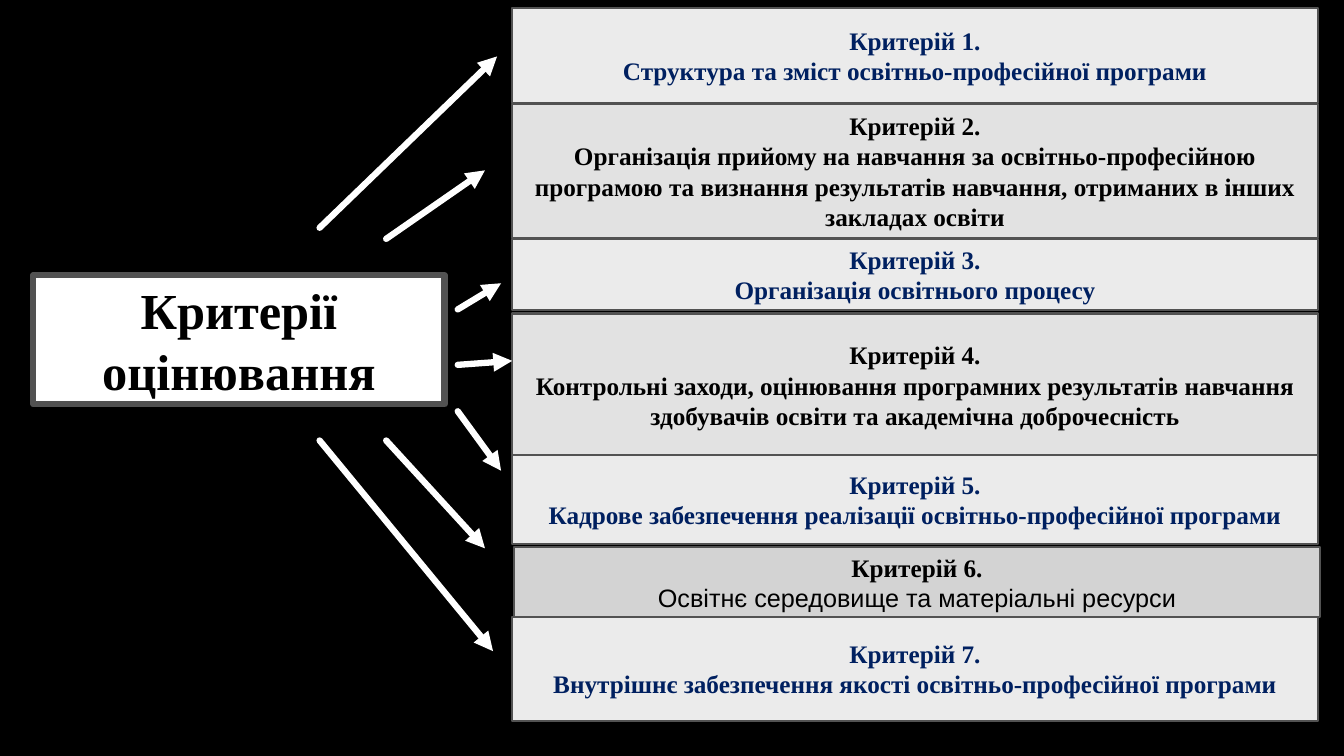
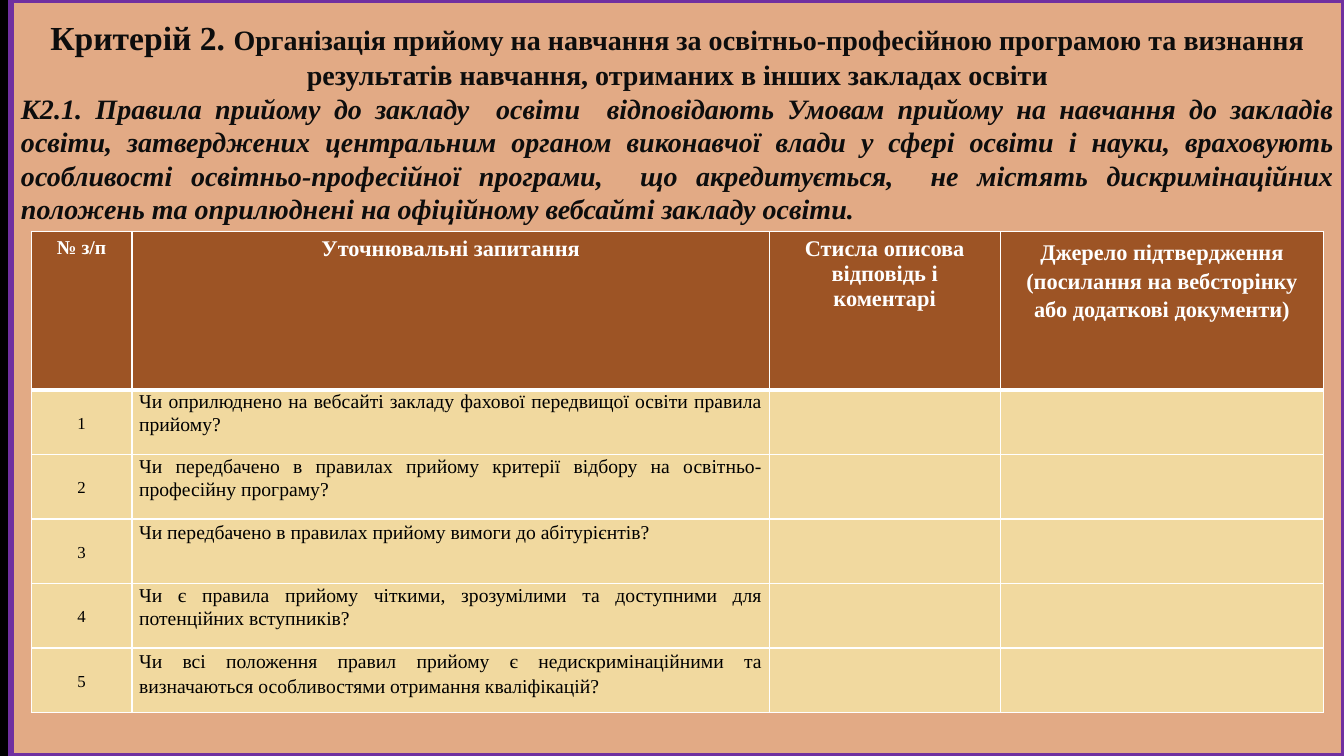
from dataclasses import dataclass

from lxml.etree import SubElement
from pptx import Presentation
from pptx.dml.color import RGBColor
from pptx.enum.shapes import MSO_CONNECTOR, MSO_SHAPE
from pptx.enum.text import MSO_ANCHOR as Anchor, PP_ALIGN as Align
from pptx.oxml import parse_xml
from pptx.oxml.ns import nsdecls, qn
from pptx.util import Inches, Pt

COLORS = {
    "black": "000000", "white": "FFFFFF", "frame": "525252", "navy": "002060",
    "light": "EBEBEB", "medium": "E2E2E2", "dark": "D3D3D3",
    "peach": "E2AA85", "purple": "7030A0", "ink": "0D0D0D",
    "brown": "9D5425", "sand": "F1D99F",
}
SERIF = "Times New Roman"


@dataclass(frozen=True)
class Run:
    text: str
    size: float
    color: str = "black"
    bold: bool = True
    italic: bool = False
    font: str = SERIF


@dataclass(frozen=True)
class Para:
    runs: tuple[Run, ...]
    align: Align = Align.CENTER
    spacing: float | None = None


@dataclass(frozen=True)
class Box:
    left: float
    top: float
    width: float
    height: float
    fill: str
    line: str
    weight: float


@dataclass(frozen=True)
class Criterion:
    text: str
    top: float
    height: float
    fill: str = "light"
    color: str = "navy"
    left: float = 5.08
    plain: bool = False


@dataclass(frozen=True)
class Arrow:
    x1: float
    y1: float
    x2: float
    y2: float


@dataclass(frozen=True)
class Question:
    text: str
    spacing: float = 1.06


CRITERIA = (
    Criterion("Структура та зміст освітньо-професійної програми", 0.08, 0.94),
    Criterion("Організація прийому на навчання за освітньо-професійною програмою "
              "та визнання результатів навчання, отриманих в інших закладах освіти",
              1.03, 1.33, "medium", "black"),
    Criterion("Організація освітнього процесу", 2.37, 0.71),
    Criterion("Контрольні заходи, оцінювання програмних результатів навчання "
              "здобувачів освіти та академічна доброчесність",
              3.11, 1.42, "medium", "black"),
    Criterion("Кадрове забезпечення реалізації освітньо-професійної програми", 4.51, 0.89),
    Criterion("Освітнє середовище та матеріальні ресурси",
              5.43, 0.69, "dark", "black", 5.1, True),
    Criterion("Внутрішнє забезпечення якості освітньо-професійної програми", 6.12, 1.03),
)
ARROWS = (
    Arrow(3.17, 2.26, 4.93, 0.56),
    Arrow(3.83, 2.37, 4.81, 1.69),
    Arrow(4.54, 3.07, 4.97, 2.81),
    Arrow(4.54, 3.62, 5.08, 3.58),
    Arrow(4.54, 4.08, 4.97, 4.67),
    Arrow(3.83, 4.37, 4.81, 5.44),
    Arrow(3.17, 4.37, 4.89, 6.46),
)
RULE = ("К2.1. Правила прийому до закладу  освіти  відповідають Умовам прийому на "
        "навчання до закладів освіти, затверджених центральним органом виконавчої "
        "влади у сфері освіти і науки, враховують особливості освітньо-професійної "
        "програми,  що акредитується,  не містять дискримінаційних положень та "
        "оприлюднені на офіційному вебсайті закладу освіти.")
HEADINGS = (
    (("№ з/п",), 14, None),
    (("Уточнювальні запитання",), 16, None),
    (("Стисла описова відповідь і коментарі",), 16, None),
    (("Джерело підтвердження",
      "(посилання на вебсторінку або додаткові документи)"), 16, 1.15),
)
QUESTIONS = (
    Question("Чи оприлюднено на вебсайті закладу фахової передвищої освіти правила прийому?"),
    Question("Чи передбачено в правилах прийому критерії відбору на "
             "освітньо-професійну програму?"),
    Question("Чи передбачено в правилах прийому вимоги до абітурієнтів?", 1.15),
    Question("Чи є правила прийому чіткими, зрозумілими та доступними для "
             "потенційних вступників?"),
    Question("Чи всі положення правил прийому є недискримінаційними та визначаються "
             "особливостями отримання кваліфікацій?", 1.15),
)
COLUMN_WIDTHS = (1, 6.32, 2.29, 3.21)
HEADER_HEIGHT, ROW_HEIGHT = 1.57, 0.64


def rgb(name: str) -> RGBColor:
    return RGBColor.from_string(COLORS[name])


def apply_format(target, values: dict) -> None:
    for attribute, value in values.items():
        setattr(target, attribute, value)


def paint(fill, color: str) -> None:
    fill.solid()
    fill.fore_color.rgb = rgb(color)


def write(frame, paras: tuple[Para, ...]) -> None:
    for index, para in enumerate(paras):
        paragraph = frame.add_paragraph() if index else frame.paragraphs[0]
        apply_format(paragraph, {"alignment": para.align, "line_spacing": para.spacing})
        for part in para.runs:
            run = paragraph.add_run()
            run.text = part.text
            apply_format(run.font, {"name": part.font, "size": Pt(part.size),
                                    "bold": part.bold, "italic": part.italic})
            run.font.color.rgb = rgb(part.color)


def add_slide(deck):
    slide = deck.slides.add_slide(deck.slide_layouts[6])
    paint(slide.background.fill, "black")
    return slide


def draw_box(slide, box: Box, paras: tuple[Para, ...]):
    lengths = (Inches(v) for v in (box.left, box.top, box.width, box.height))
    shape = slide.shapes.add_shape(MSO_SHAPE.RECTANGLE, *lengths)
    shape.shadow.inherit = False
    paint(shape.fill, box.fill)
    paint(shape.line.fill, box.line)
    shape.line.width = Pt(box.weight)
    apply_format(shape.text_frame, {"word_wrap": True, "vertical_anchor": Anchor.MIDDLE})
    write(shape.text_frame, paras)
    return shape


def draw_arrow(slide, arrow: Arrow) -> None:
    ends = (Inches(v) for v in (arrow.x1, arrow.y1, arrow.x2, arrow.y2))
    connector = slide.shapes.add_connector(MSO_CONNECTOR.STRAIGHT, *ends)
    paint(connector.line.fill, "white")
    connector.line.width = Pt(4.5)
    properties = connector._element.spPr
    stroke = properties.find(qn("a:ln"))
    stroke.set("cap", "rnd")
    SubElement(stroke, qn("a:tailEnd"), type="triangle")
    SubElement(properties, qn("a:effectLst"))


def draw_borders(cell, widths: dict[str, float]) -> None:
    properties = cell._tc.get_or_add_tcPr()
    for index, (side, width) in enumerate(widths.items()):
        properties.insert(index, parse_xml(
            f'<a:ln{side} {nsdecls("a")} w="{Pt(width)}"><a:solidFill>'
            f'<a:srgbClr val="{COLORS["white"]}"/></a:solidFill></a:ln{side}>'))


def build_criteria(deck) -> None:
    slide = add_slide(deck)
    draw_box(slide, Box(0.33, 2.73, 4.08, 1.28, "white", "frame", 4.5),
             (Para((Run("Критерії оцінювання", 36),)),))
    for number, item in enumerate(CRITERIA, 1):
        label = Run(f"Критерій {number}.", 18, item.color)
        description = Run(item.text, 18, item.color, not item.plain,
                          font="Arial" if item.plain else SERIF)
        draw_box(slide,
                 Box(item.left, item.top, 7.99, item.height, item.fill, "frame", 1.5),
                 tuple(Para((run,)) for run in (label, description)))
    for arrow in ARROWS:
        draw_arrow(slide, arrow)


def draw_questions(slide) -> None:
    table = slide.shapes.add_table(
        len(QUESTIONS) + 1, len(COLUMN_WIDTHS), Inches(0.31), Inches(2.3),
        Inches(sum(COLUMN_WIDTHS)),
        Inches(HEADER_HEIGHT + ROW_HEIGHT * len(QUESTIONS))).table
    apply_format(table, {"first_row": False, "horz_banding": False})
    for column, width in zip(table.columns, COLUMN_WIDTHS):
        column.width = Inches(width)
    for index, row in enumerate(table.rows):
        row.height = Inches(ROW_HEIGHT if index else HEADER_HEIGHT)
        for cell in row.cells:
            paint(cell.fill, "sand" if index else "brown")
            draw_borders(cell, {"L": 1, "R": 1, "T": 3 if index == 1 else 1,
                                "B": 1 if index else 3})
    for column, (lines, size, spacing) in enumerate(HEADINGS):
        write(table.cell(0, column).text_frame,
              tuple(Para((Run(line, size, "white"),), spacing=spacing) for line in lines))
    margins = {"margin_left": Inches(0.07), "margin_right": Inches(0.07),
               "margin_top": 0, "margin_bottom": 0}
    for number, question in enumerate(QUESTIONS, 1):
        number_cell, question_cell = table.cell(number, 0), table.cell(number, 1)
        apply_format(number_cell, margins | {"vertical_anchor": Anchor.MIDDLE})
        apply_format(question_cell, margins)
        write(number_cell.text_frame,
              (Para((Run(str(number), 12, bold=False),), spacing=1.15),))
        write(question_cell.text_frame,
              (Para((Run(question.text, 14, bold=False),), Align.JUSTIFY,
                    question.spacing),))


def build_admission(deck) -> None:
    slide = add_slide(deck)
    heading = Para((Run("Критерій 2. ", 24, "ink"), Run(CRITERIA[1].text, 20, "ink")))
    rule = Para((Run(RULE, 20, "ink", italic=True),), Align.JUSTIFY)
    panel = draw_box(slide, Box(0.11, 0, 13.22, 7.5, "peach", "purple", 4.5),
                     (heading, rule))
    apply_format(panel.text_frame, {"vertical_anchor": Anchor.TOP,
                                    "margin_top": Inches(0.17)})
    draw_questions(slide)


def main() -> None:
    deck = Presentation()
    apply_format(deck, {"slide_width": Inches(13.33), "slide_height": Inches(7.5)})
    build_criteria(deck)
    build_admission(deck)
    deck.save("out.pptx")


if __name__ == "__main__":
    main()
